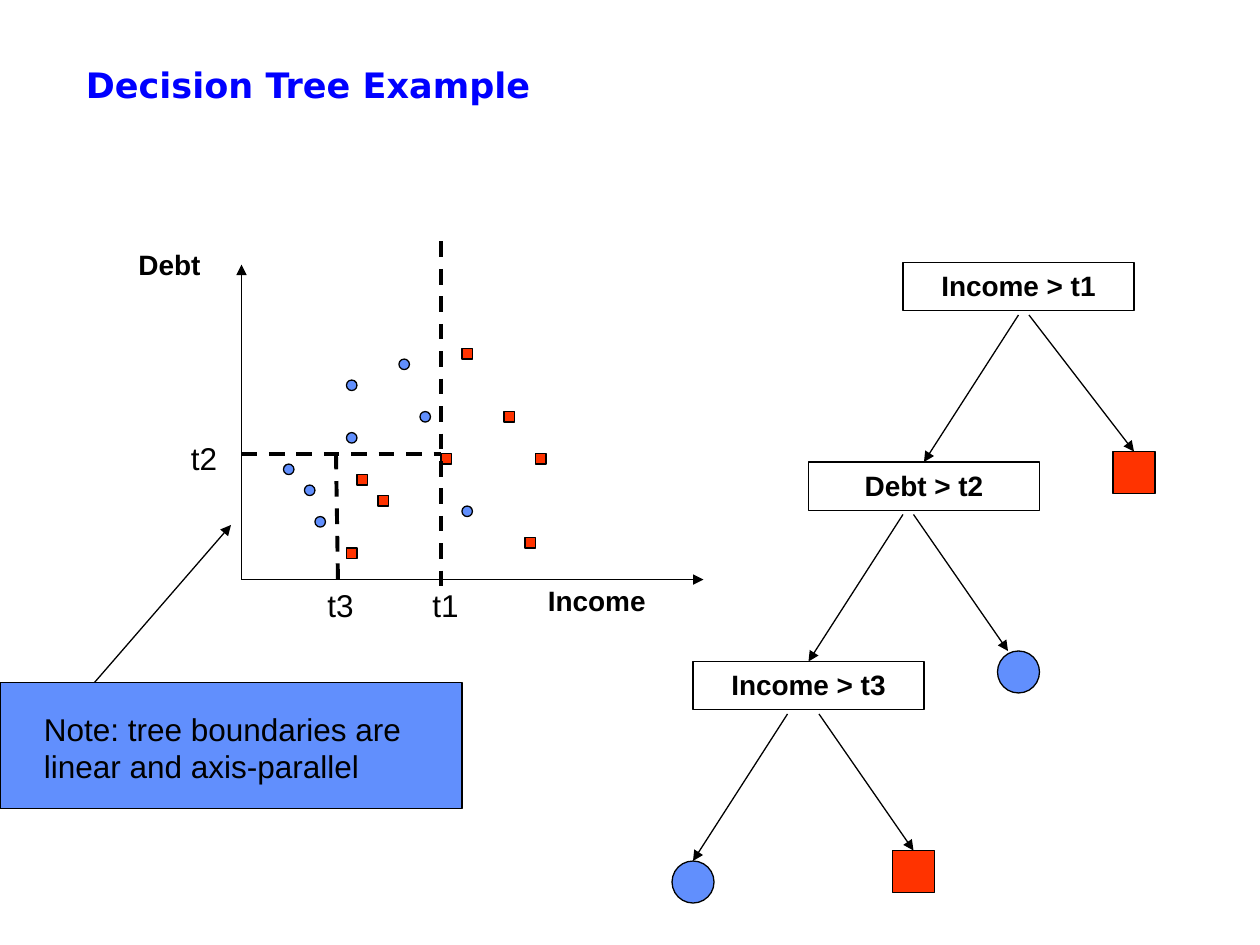
import pptx
import pptx.util
import pptx.dml.color
import pptx.enum.dml
import pptx.enum.shapes
import pptx.enum.text
import pptx.oxml.ns
from lxml import etree

COLORS = {"blue": "618FFD", "red": "FF3300", "title": "0000FF", "black": "000000"}
RECT = pptx.enum.shapes.MSO_SHAPE.RECTANGLE
OVAL = pptx.enum.shapes.MSO_SHAPE.OVAL
ALIGN = pptx.enum.text.PP_ALIGN
ANCHOR = pptx.enum.text.MSO_ANCHOR
FIT = pptx.enum.text.MSO_AUTO_SIZE
qn = pptx.oxml.ns.qn

prs = pptx.Presentation()
prs.slide_width = pptx.util.Inches(10)
prs.slide_height = pptx.util.Inches(7.5)
s = prs.slides.add_slide(prs.slide_layouts[6])

# Grid of 120 columns by 90 rows; every position below is in grid cells
COL = prs.slide_width / 120
ROW = prs.slide_height / 90


def add_box(kind, x, y, w, h, fill=None, lines=(), size=18, bold=False,
            font="Arial", color="black", wrap=False):
    """Add an outlined shape, or a plain text box when kind is None."""
    at = round(x * COL), round(y * ROW), round(w * COL), round(h * ROW)
    if kind is None:
        sp = s.shapes.add_textbox(*at)
    else:
        sp = s.shapes.add_shape(kind, *at)
        sp.shadow.inherit = False
        sp.line.color.rgb = pptx.dml.color.RGBColor.from_string(COLORS["black"])
        sp.line.width = pptx.util.Pt(0.75)
        if fill:
            sp.fill.solid()
            sp.fill.fore_color.rgb = pptx.dml.color.RGBColor.from_string(COLORS[fill])
        else:
            sp.fill.background()
    if not lines:
        return
    tf = sp.text_frame
    tf.word_wrap = wrap
    tf.auto_size = FIT.NONE if wrap else FIT.SHAPE_TO_FIT_TEXT
    tf.vertical_anchor = ANCHOR.MIDDLE if wrap else ANCHOR.TOP
    for i, text in enumerate(lines):
        p = tf.paragraphs[0] if i == 0 else tf.add_paragraph()
        p.alignment = ALIGN.LEFT if kind is None else ALIGN.CENTER
        r = p.add_run()
        r.text = text
        r.font.name = font
        r.font.size = pptx.util.Pt(size)
        r.font.bold = bold
        r.font.color.rgb = pptx.dml.color.RGBColor.from_string(COLORS[color])


def add_line(x1, y1, x2, y2, dashed=False):
    """Add a thin arrow, or a thick dashed line without a head."""
    c = s.shapes.add_connector(
        pptx.enum.shapes.MSO_CONNECTOR.STRAIGHT,
        round(x1 * COL), round(y1 * ROW), round(x2 * COL), round(y2 * ROW))
    c.line.color.rgb = pptx.dml.color.RGBColor.from_string(COLORS["black"])
    c.line.width = pptx.util.Pt(2.25 if dashed else 0.75)
    if dashed:
        c.line.dash_style = pptx.enum.dml.MSO_LINE.DASH
    else:
        etree.SubElement(c.line._get_or_add_ln(), qn("a:tailEnd"), type="triangle")
    etree.SubElement(c._element.spPr, qn("a:effectLst"))


# Title
add_box(None, 7, 4, 102, 8, lines=["Decision Tree Example"], size=20, bold=True,
        font="DejaVu Sans", color="title", wrap=True)

# Scatter plot axes
LEFT, BASE = 23, 55.2
add_line(LEFT, BASE, 67, BASE)
add_line(LEFT, BASE, LEFT, 25.2)

# Data points, one cell each
circles = [(27, 44.2), (29, 46.2), (33, 36.2), (38, 34.2),
           (33, 41.2), (40, 39.2), (30, 49.2), (44, 48.2)]
squares = [(34, 45.2), (36, 47.2), (42, 43.2), (48, 39.2),
           (44, 33.2), (33, 52.2), (50, 51.2), (51, 43.2)]
for kind, fill, points in ((OVAL, "blue", circles), (RECT, "red", squares)):
    for x, y in points:
        add_box(kind, x, y, 1, 1, fill)

# Decision boundaries t1, t2 and t3
T1, T2, T3 = 42, 43.2, 32
add_line(T1, 23, T1, 56, dashed=True)
add_line(LEFT, T2, T1, T2, dashed=True)
add_line(T3, T2, T3 + 0.2, 55.9, dashed=True)

# Threshold and axis labels
for text, x, y in (("t1", T1 - 2, BASE), ("t3", T3 - 2, BASE), ("t2", 17, T2 - 2)):
    add_box(None, x, y, 4.9, 4.8, lines=[text])
for text, x, y, w in (("Income", 51, 55, 11.8), ("Debt", 12, 23, 8.3)):
    add_box(None, x, y, w, 4.4, lines=[text], size=16, bold=True)

# Tree nodes
for text, x, y in (("Income > t1", 86, 25), ("Debt > t2", 77, 44), ("Income > t3", 66, 63)):
    add_box(RECT, x, y, 22, 4.6, lines=[text], size=16, bold=True)

# Tree leaves
for kind, fill, x, y in ((RECT, "red", 106, 43), (OVAL, "blue", 95, 62),
                         (RECT, "red", 85, 81), (OVAL, "blue", 64, 82)):
    add_box(kind, x, y, 4, 4, fill)

# Tree branches
for branch in ((97, 30, 88, 44), (98, 30, 108, 43), (86, 49, 77, 63),
               (87, 49, 96, 62), (75, 68, 66, 82), (78, 68, 87, 81)):
    add_line(*branch)

# Note with its pointer
add_box(RECT, 0, 65, 44, 12, "blue")
add_box(None, 3, 67, 38, 8.4,
        lines=["Note: tree boundaries are", "linear and axis-parallel"])
add_line(9, 65, 22, 50)

prs.save("out.pptx")
